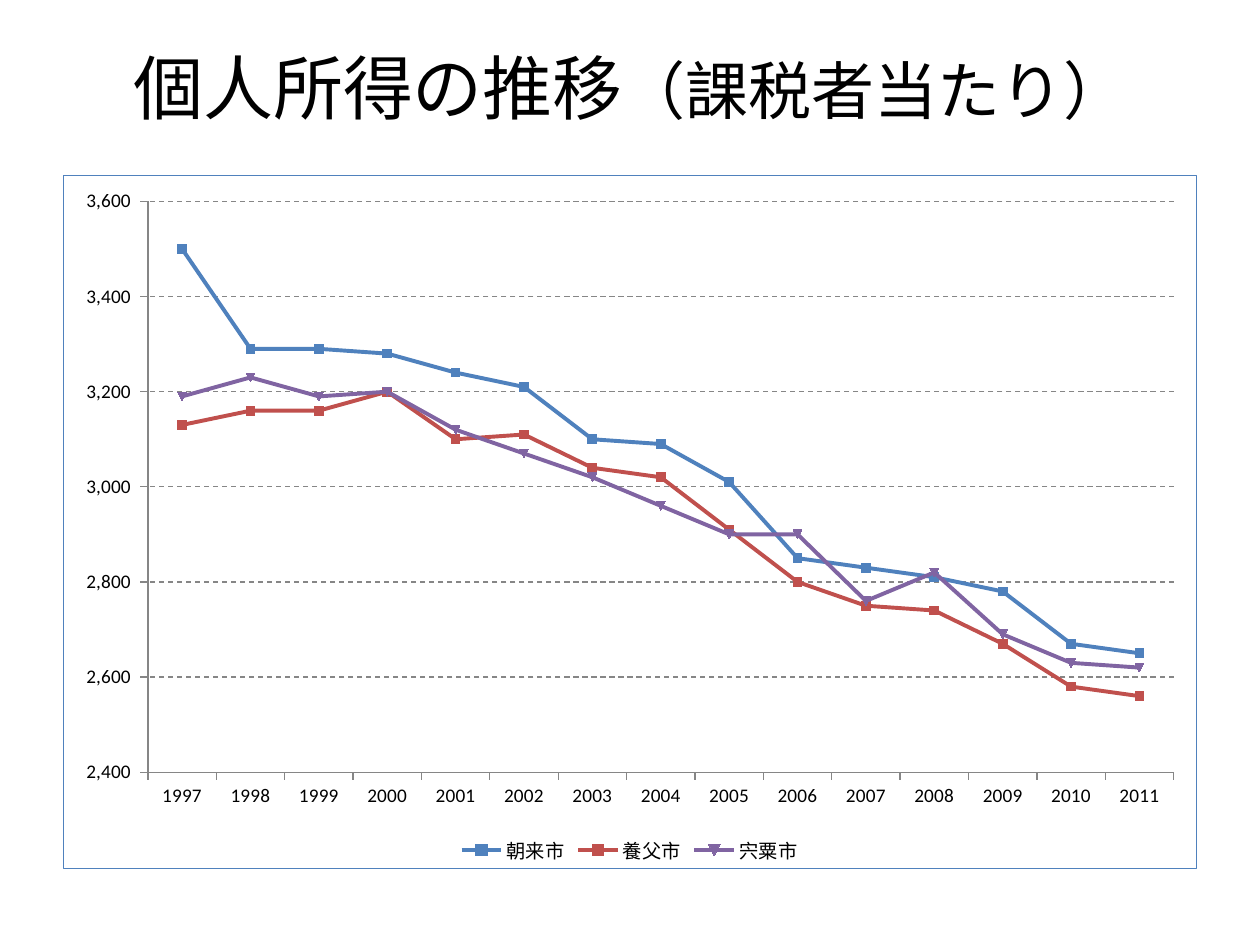
from pptx import Presentation
from pptx.chart.data import CategoryChartData
from pptx.dml.color import RGBColor
from pptx.enum.chart import (XL_CHART_TYPE, XL_LEGEND_POSITION,
                             XL_MARKER_STYLE, XL_TICK_MARK)
from pptx.enum.dml import MSO_LINE
from pptx.enum.text import MSO_ANCHOR, PP_ALIGN
from pptx.oxml import parse_xml
from pptx.oxml.ns import nsdecls, qn
from pptx.util import Inches, Pt

LINES = XL_CHART_TYPE.LINE_MARKERS
BOTTOM = XL_LEGEND_POSITION.BOTTOM
SQUARE = XL_MARKER_STYLE.SQUARE
OUT = XL_TICK_MARK.OUTSIDE
DASH = MSO_LINE.DASH
MIDDLE = MSO_ANCHOR.MIDDLE
CENTER = PP_ALIGN.CENTER
FONT = "Calibri"
GRAY = "868686"

# City: line colour, marker (None is automatic), income per taxpayer
CITIES = {
    "朝来市": ("4F81BD", None, [3500, 3290, 3290, 3280, 3240, 3210, 3100, 3090,
                             3010, 2850, 2830, 2810, 2780, 2670, 2650]),
    "養父市": ("C0504D", SQUARE, [3130, 3160, 3160, 3200, 3100, 3110, 3040, 3020,
                               2910, 2800, 2750, 2740, 2670, 2580, 2560]),
    "宍粟市": ("8064A2", None, [3190, 3230, 3190, 3200, 3120, 3070, 3020, 2960,
                             2900, 2900, 2760, 2820, 2690, 2630, 2620]),
}


def color(code):
    return RGBColor.from_string(code)


def style(font, size):
    font.name = FONT
    font.size = Pt(size)
    font.color.rgb = color("000000")


deck = Presentation()
deck.slide_width, deck.slide_height = Inches(10), Inches(7.5)
slide = deck.slides.add_slide(deck.slide_layouts[5])

# Title
title = slide.shapes.title
title.left, title.top = Inches(0.5), Inches(0.3)
title.width, title.height = Inches(9), Inches(0.77)
title.text_frame.vertical_anchor = MIDDLE
head = title.text_frame.paragraphs[0]
head.alignment = CENTER
for text, size in (("個人所得の推移", 40), ("（課税者当たり）", 36)):
    run = head.add_run()
    run.text = text
    style(run.font, size)

# Chart data
data = CategoryChartData(number_format="#,##0_ ")
data.categories = [str(year) for year in range(1997, 2012)]
for city, (_, _, values) in CITIES.items():
    data.add_series(city, values)
chart = slide.shapes.add_chart(LINES, Inches(0.5), Inches(1.39),
                               Inches(9), Inches(5.51), data).chart
style(chart.font, 10)
chart.has_title = False

# Frame
frame = parse_xml(
    f'<c:spPr {nsdecls("c", "a")}>'
    '<a:solidFill><a:srgbClr val="FFFFFF"/></a:solidFill>'
    '<a:ln w="9525"><a:solidFill><a:srgbClr val="4F81BD"/></a:solidFill></a:ln>'
    '</c:spPr>')
chart.element.find(qn("c:chart")).addnext(frame)

# Legend
chart.has_legend = True
chart.legend.position = BOTTOM
chart.legend.include_in_layout = False
style(chart.legend.font, 11)

# Axes
years, income = chart.category_axis, chart.value_axis
for axis in (years, income):
    style(axis.tick_labels.font, 11)
    axis.major_tick_mark = OUT
    axis.format.line.color.rgb = color(GRAY)
    axis.format.line.width = Pt(0.75)
income.minimum_scale, income.maximum_scale = 2400, 3600
income.major_unit = 200
income.tick_labels.number_format = "#,##0_ "
income.tick_labels.number_format_is_linked = False
grid = income.major_gridlines.format.line
grid.color.rgb = color(GRAY)
grid.width = Pt(0.75)
grid.dash_style = DASH

# Lines and markers
for series, (code, symbol, _) in zip(chart.plots[0].series, CITIES.values()):
    series.smooth = False
    series.format.line.color.rgb = color(code)
    series.format.line.width = Pt(2.25)
    marker = series.marker
    if symbol:
        marker.style = symbol
    marker.size = 5
    marker.format.fill.solid()
    marker.format.fill.fore_color.rgb = color(code)
    marker.format.line.color.rgb = color(code)

deck.save("out.pptx")
